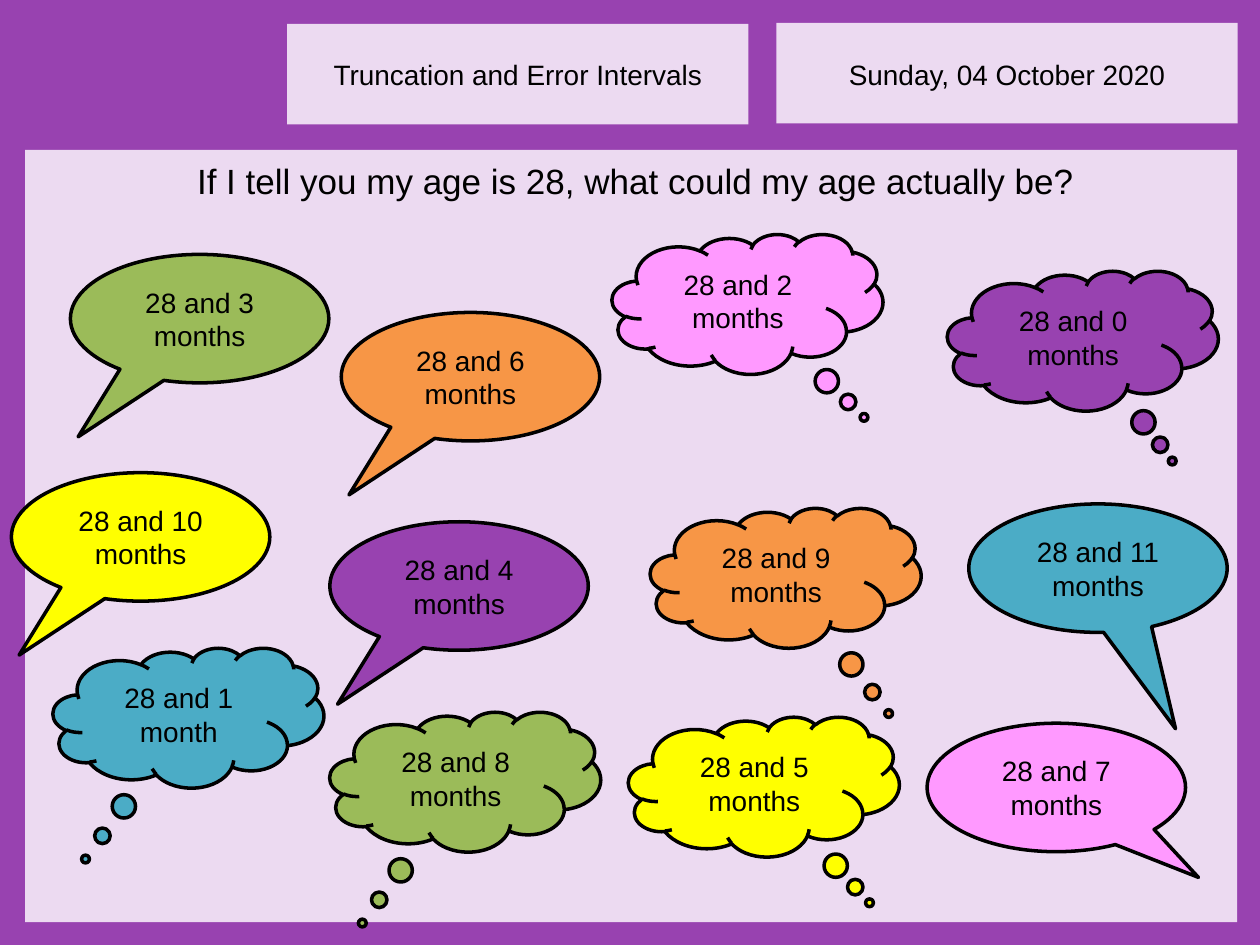
from dataclasses import dataclass

from pptx import Presentation
from pptx.dml.color import RGBColor
from pptx.enum.shapes import MSO_SHAPE
from pptx.enum.text import MSO_ANCHOR, PP_ALIGN
from pptx.util import Cm, Pt


@dataclass(frozen=True)
class Theme:
    font: str = "Arial"
    ink: str = "000000"
    purple: str = "9842B0"
    pale: str = "ECDAF1"
    green: str = "9BBB59"
    teal: str = "4BACC6"
    orange: str = "F79646"
    pink: str = "FF99FF"
    yellow: str = "FFFF00"
    body: int = 16
    title: int = 20
    line: int = 2


THEME = Theme()
SPEECH = (MSO_SHAPE.OVAL_CALLOUT, 5.21, 2.59)
THOUGHT = (MSO_SHAPE.CLOUD_CALLOUT, 5.46, 2.82)
LEFT = (-0.47, 0.92)
DOWN = (-0.38, 1.01)

# kind, left, top, tail, fill, age
AGES = [
    (SPEECH, 1.42, 5.13, LEFT, THEME.green, "28 and 3 months"),
    (THOUGHT, 6.65, 14.35, DOWN, THEME.green, "28 and 8 months"),
    (SPEECH, 19.53, 10.16, (0.3, 1.25), THEME.teal, "28 and 11 months"),
    (THOUGHT, 1.07, 13.06, DOWN, THEME.teal, "28 and 1 month"),
    (SPEECH, 6.88, 6.3, LEFT, THEME.orange, "28 and 6 months"),
    (THOUGHT, 13.11, 10.24, (0.38, 0.97), THEME.orange, "28 and 9 months"),
    (SPEECH, 6.65, 10.52, LEFT, THEME.purple, "28 and 4 months"),
    (THOUGHT, 19.1, 5.46, (0.33, 0.86), THEME.purple, "28 and 0 months"),
    (SPEECH, 18.69, 14.58, (0.55, 0.7), THEME.pink, "28 and 7 months"),
    (THOUGHT, 12.34, 4.72, (0.43, 0.81), THEME.pink, "28 and 2 months"),
    (SPEECH, 0.23, 9.53, LEFT, THEME.yellow, "28 and 10 months"),
    (THOUGHT, 12.67, 14.45, (0.39, 0.83), THEME.yellow, "28 and 5 months"),
]


def write(shape, text, size):
    frame = shape.text_frame
    frame.word_wrap = True
    para = frame.paragraphs[0]
    para.alignment = PP_ALIGN.CENTER
    run = para.add_run()
    run.text = text
    style = {"name": THEME.font, "size": Pt(size)}
    for key, value in style.items():
        setattr(run.font, key, value)
    run.font.color.rgb = RGBColor.from_string(THEME.ink)


def draw(slide, kind, box, fill):
    """Add a filled shape with neither shadow nor line."""
    shape = slide.shapes.add_shape(kind, *map(Cm, box))
    shape.shadow.inherit = False
    shape.fill.solid()
    shape.fill.fore_color.rgb = RGBColor.from_string(fill)
    shape.line.fill.background()
    return shape


def panel(slide, box, fill=THEME.pale):
    draw(slide, MSO_SHAPE.RECTANGLE, box, fill)


def label(slide, box, text, size=THEME.body):
    write(slide.shapes.add_textbox(*map(Cm, box)), text, size)


def bubble(slide, kind, left, top, tail, fill, text):
    form, wide, high = kind
    shape = draw(slide, form, (left, top, wide, high), fill)
    for i, value in enumerate(tail):
        shape.adjustments[i] = value
    shape.line.color.rgb = RGBColor.from_string(THEME.ink)
    shape.line.width = Pt(THEME.line)
    shape.text_frame.vertical_anchor = MSO_ANCHOR.MIDDLE
    write(shape, text, THEME.body)


def main():
    deck = Presentation()
    deck.slide_width, deck.slide_height = Cm(25.4), Cm(19.05)
    slide = deck.slides.add_slide(deck.slide_layouts[6])

    panel(slide, (0, 0, 25.4, 19.05), THEME.purple)
    heads = [(15.65, 0.46, "Sunday, 04 October 2020"),
             (5.79, 0.48, "Truncation and Error Intervals")]
    for left, top, text in heads:
        panel(slide, (left, top, 9.3, 2.03))
        label(slide, (left, 1.04, 9.3, 0.94), text)
    panel(slide, (0.51, 3.02, 24.43, 15.57))
    label(slide, (0.71, 3.1, 24.21, 1.12),
          "If I tell you my age is 28, what could my age actually be?",
          THEME.title)
    for age in AGES:
        bubble(slide, *age)

    deck.save("out.pptx")


if __name__ == "__main__":
    main()
